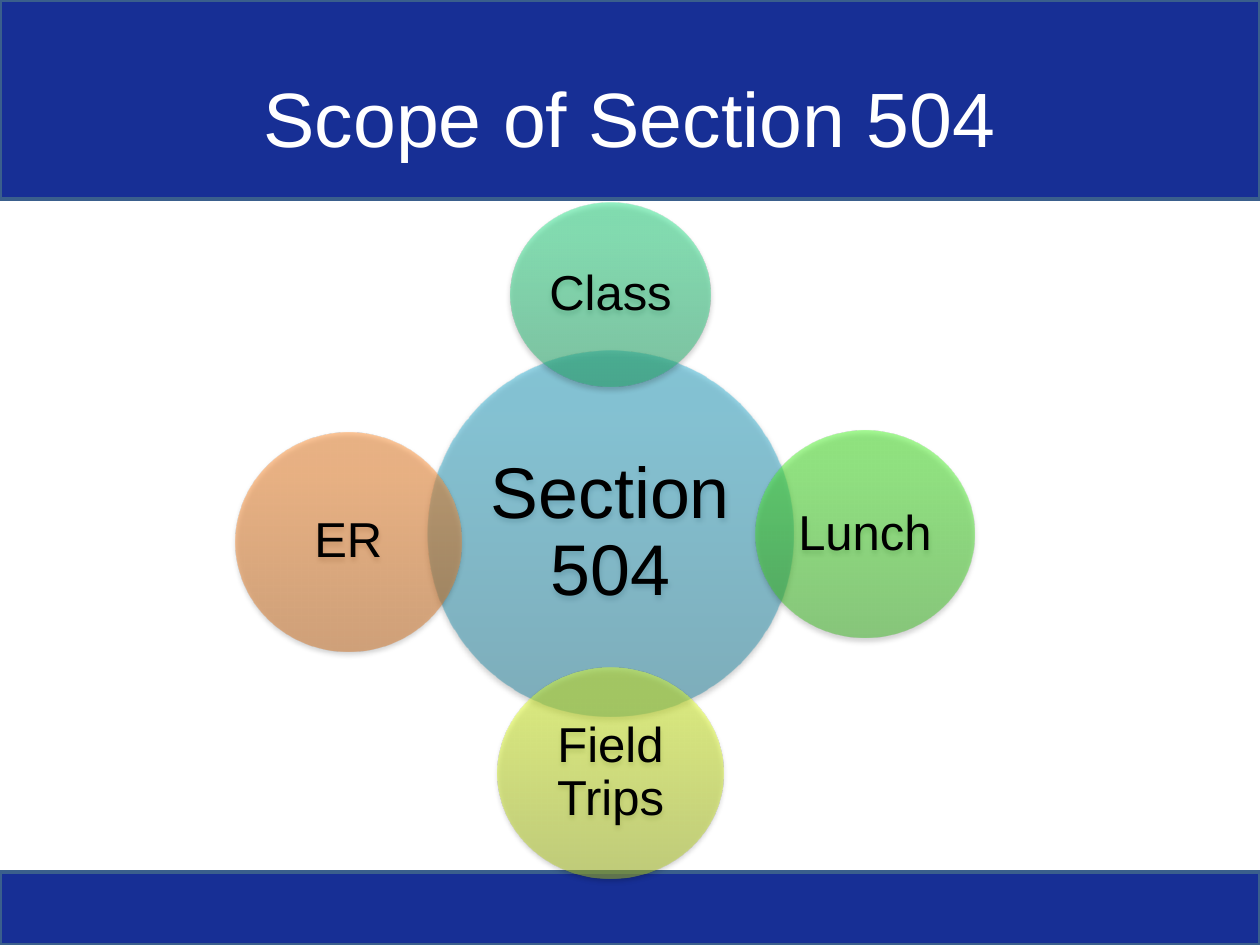
from pptx import Presentation
from pptx import util as u
from pptx.dml.color import RGBColor
from pptx.enum import shapes, text
from pptx.oxml import parse_xml
from pptx.oxml.ns import nsdecls, qn

COLORS = {
    "band": "172F95",
    "band line": "3A5F8C",
    "title": "FFFFFF",
    "label": "000000",
}
# Gradient colours from the bottom to the top of each circle
GRADIENTS = {
    "blue": ("2A88A2", "37B1D2", "34B4D6"),
    "teal": ("26AE6D", "32E28D", "2EE68E"),
    "green": ("3CB923", "4EF02E", "4CF52A"),
    "yellow": ("ACC321", "DFFD2B", "E1FF2B"),
    "orange": ("CC6E20", "FF9034", "FF9136"),
}
STOPS = (0, 80, 100)


class ScopeSlide:
    font = "Arial"

    def __init__(self, presentation):
        self.slide = presentation.slides.add_slide(presentation.slide_layouts[6])

    def color(self, name):
        return RGBColor.from_string(COLORS[name])

    def label(self, shape, words, size, color, inset, spacing=1.0):
        frame = shape.text_frame
        frame.word_wrap = True
        frame.vertical_anchor = text.MSO_ANCHOR.MIDDLE
        frame.margin_left = frame.margin_right = u.Inches(inset)
        frame.margin_top = frame.margin_bottom = u.Inches(inset)
        paragraph = frame.paragraphs[0]
        paragraph.text = words
        paragraph.alignment = text.PP_ALIGN.CENTER
        paragraph.line_spacing = spacing
        paragraph.font.name = self.font
        paragraph.font.size = u.Pt(size)
        paragraph.font.color.rgb = self.color(color)

    def shape(self, kind, box):
        shape = self.slide.shapes.add_shape(kind, *map(u.Inches, box))
        shape.shadow.inherit = False
        return shape

    def band(self, top, height):
        band = self.shape(shapes.MSO_SHAPE.RECTANGLE, (0, top, 10, height))
        band.fill.solid()
        band.fill.fore_color.rgb = self.color("band")
        band.line.color.rgb = self.color("band line")
        band.line.width = u.Pt(2)

    def title(self, words, box):
        title = self.slide.shapes.add_textbox(*map(u.Inches, box))
        self.label(title, words, 44, "title", 0.1)

    def circle(self, words, box, gradient, size=28, inset=0.04):
        circle = self.shape(shapes.MSO_SHAPE.OVAL, box)
        circle.line.fill.background()
        circle.fill.gradient()
        circle.fill.gradient_angle = 90
        properties = circle.element.spPr

        # Half-transparent gradient stops
        stops = properties.find(qn("a:gradFill")).find(qn("a:gsLst"))
        for stop in list(stops):
            stops.remove(stop)
        for position, color in zip(STOPS, GRADIENTS[gradient]):
            stops.append(parse_xml(
                f'<a:gs {nsdecls("a")} pos="{position * 1000}"><a:srgbClr val="{color}">'
                '<a:alpha val="50000"/></a:srgbClr></a:gs>'))

        # Soft shadow below
        properties.find(qn("a:effectLst")).append(parse_xml(
            f'<a:outerShdw {nsdecls("a")} blurRad="{u.Pt(3.1)}" dist="{u.Pt(1.8)}" '
            'dir="5400000" rotWithShape="0"><a:srgbClr val="000000">'
            '<a:alpha val="35000"/></a:srgbClr></a:outerShdw>'))
        self.label(circle, words, size, "label", inset, spacing=0.9)


def main():
    presentation = Presentation()
    presentation.slide_width = u.Inches(10)
    presentation.slide_height = u.Inches(7.5)
    scope = ScopeSlide(presentation)

    # Bands and title
    scope.band(0, 1.58)
    scope.band(6.92, 0.58)
    scope.title("Scope of Section 504", (0.5, 0.3, 9, 1.25))

    # Central circle and the four areas around it
    scope.circle("Section 504", (3.39, 2.78, 2.91, 2.91), "blue", size=41, inset=0.06)
    scope.circle("Class", (4.05, 1.61, 1.59, 1.46), "teal")
    scope.circle("Lunch ", (6, 3.42, 1.73, 1.64), "green")
    scope.circle("Field Trips", (3.95, 5.3, 1.79, 1.67), "yellow")
    scope.circle("ER", (1.87, 3.43, 1.79, 1.74), "orange")

    presentation.save("out.pptx")


if __name__ == "__main__":
    main()
